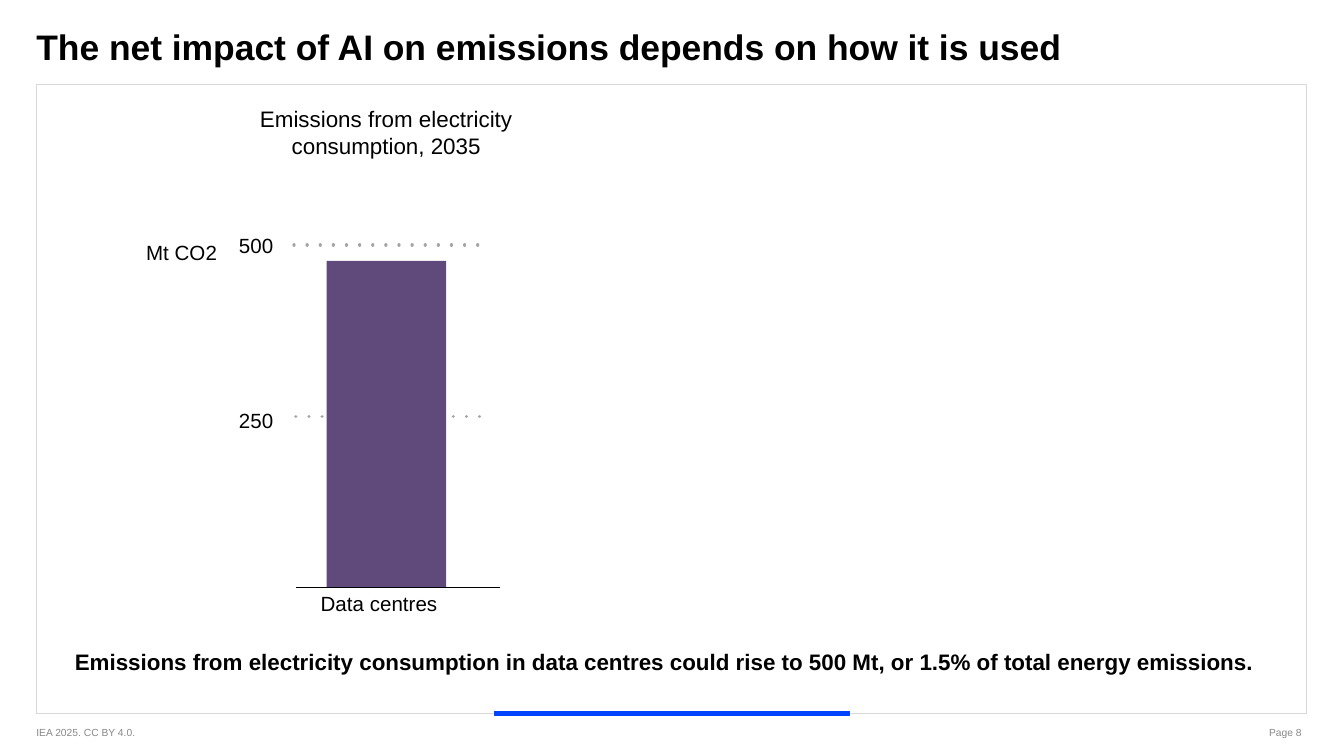
from typing import NamedTuple

from lxml import etree
from pptx import Presentation
from pptx.dml.color import RGBColor
from pptx.enum.shapes import MSO_CONNECTOR, MSO_SHAPE
from pptx.enum.text import MSO_ANCHOR, PP_ALIGN
from pptx.oxml.ns import qn
from pptx.util import Pt

LEFT, MID, RIGHT = PP_ALIGN.LEFT, PP_ALIGN.CENTER, PP_ALIGN.RIGHT
TOP, CENTRE = MSO_ANCHOR.TOP, MSO_ANCHOR.MIDDLE
RECT, STRAIGHT = MSO_SHAPE.RECTANGLE, MSO_CONNECTOR.STRAIGHT

COLORS = {
    "text": "000000",
    "foot": "888888",
    "frame": "D8D8D8",
    "accent": "0044FF",
    "bar": "604A7B",
    "grid": "A5A5A5",
}
NONE = (0, 0, 0, 0)
PAD = (0, 3.6, 7.2, 3.6)


class Label(NamedTuple):
    text: str
    box: tuple[float, float, float, float]
    size: float
    align: PP_ALIGN = LEFT
    inset: tuple[float, float, float, float] = NONE
    anchor: MSO_ANCHOR = TOP
    bold: bool = False
    color: str = "text"


class Block(NamedTuple):
    box: tuple[float, float, float, float]
    fill: str = ""
    line: str = ""


class Rule(NamedTuple):
    x: float
    y: float
    width: float
    color: str
    weight: float
    dotted: bool = False


def tint(name: str) -> RGBColor:
    return RGBColor.from_string(COLORS[name])


def add_label(slide, item: Label) -> None:
    frame = slide.shapes.add_textbox(*map(Pt, item.box)).text_frame
    left, top, right, bottom = map(Pt, item.inset)
    layout = {
        "word_wrap": True,
        "vertical_anchor": item.anchor,
        "margin_left": left,
        "margin_top": top,
        "margin_right": right,
        "margin_bottom": bottom,
    }
    for key, value in layout.items():
        setattr(frame, key, value)
    para = frame.paragraphs[0]
    para.alignment = item.align
    run = para.add_run()
    run.text = item.text
    style = {"name": "Arial", "size": Pt(item.size), "bold": item.bold}
    for key, value in style.items():
        setattr(run.font, key, value)
    run.font.color.rgb = tint(item.color)


def add_block(slide, item: Block) -> None:
    shape = slide.shapes.add_shape(RECT, *map(Pt, item.box))
    shape.shadow.inherit = False
    if item.fill:
        shape.fill.solid()
        shape.fill.fore_color.rgb = tint(item.fill)
    else:
        shape.fill.background()
    if item.line:
        shape.line.color.rgb = tint(item.line)
        shape.line.width = Pt(0.75)
    else:
        shape.line.fill.background()


def add_rule(slide, item: Rule) -> None:
    ends = map(Pt, (item.x, item.y, item.x + item.width, item.y))
    rule = slide.shapes.add_connector(STRAIGHT, *ends)
    rule.line.color.rgb = tint(item.color)
    rule.line.width = Pt(item.weight)
    if item.dotted:
        line = rule.line._get_or_add_ln()
        line.set("cap", "rnd")
        etree.SubElement(line, qn("a:prstDash")).set("val", "dot")
    etree.SubElement(rule._element.spPr, qn("a:effectLst"))


# Frame and accent, then the bar
FRAME = [
    Block((19.5, 45.4, 680.4, 337), line="frame"),
    Block((265, 381.2, 190, 2), "accent", "accent"),
]
BAR = Block((175, 139.8, 64, 174.8), "bar")

# Grid lines and base line
GRID = [
    Rule(157.5, 131.2, 105, "grid", 1.75, True),
    Rule(158.5, 223, 105, "grid", 1.75, True),
]
BASE = Rule(158.5, 314.6, 109.5, "text", 0.75)

LABELS = [
    # Footer
    Label("IEA 2025. CC BY 4.0.", (19.5, 385.2, 96, 14.4), 5.5,
          LEFT, PAD, CENTRE, color="foot"),
    Label("Page 8", (608.4, 385.2, 96, 14.4), 5.5,
          RIGHT, PAD, CENTRE, color="foot"),
    # Title and message
    Label("The net impact of AI on emissions depends on how it is used",
          (19.5, 13.2, 629.3, 31), 19, bold=True),
    Label("Emissions from electricity consumption in data centres could "
          "rise to 500 Mt, or 1.5% of total energy emissions.",
          (19.5, 336.2, 680.4, 42.5), 12, MID, (0, 0, 7.2, 5.8), CENTRE, True),
    # Chart text
    Label("Emissions from electricity consumption, 2035",
          (123, 52.6, 175, 36), 12, MID, PAD),
    Label("Data centres", (158.4, 313.2, 96.5, 33), 11, MID, PAD),
    Label("Mt CO2", (78.3, 128.3, 42, 13.7), 11),
    Label("500", (124.6, 124.6, 21.8, 13.7), 11, RIGHT),
    Label("250", (124.6, 218.4, 21.8, 13.7), 11, RIGHT),
]


def main() -> None:
    deck = Presentation()
    deck.slide_width, deck.slide_height = Pt(720), Pt(405)
    slide = deck.slides.add_slide(deck.slide_layouts[6])
    for item in FRAME:
        add_block(slide, item)
    for item in GRID:
        add_rule(slide, item)
    add_block(slide, BAR)
    add_rule(slide, BASE)
    for item in LABELS:
        add_label(slide, item)
    deck.save("out.pptx")


if __name__ == "__main__":
    main()
